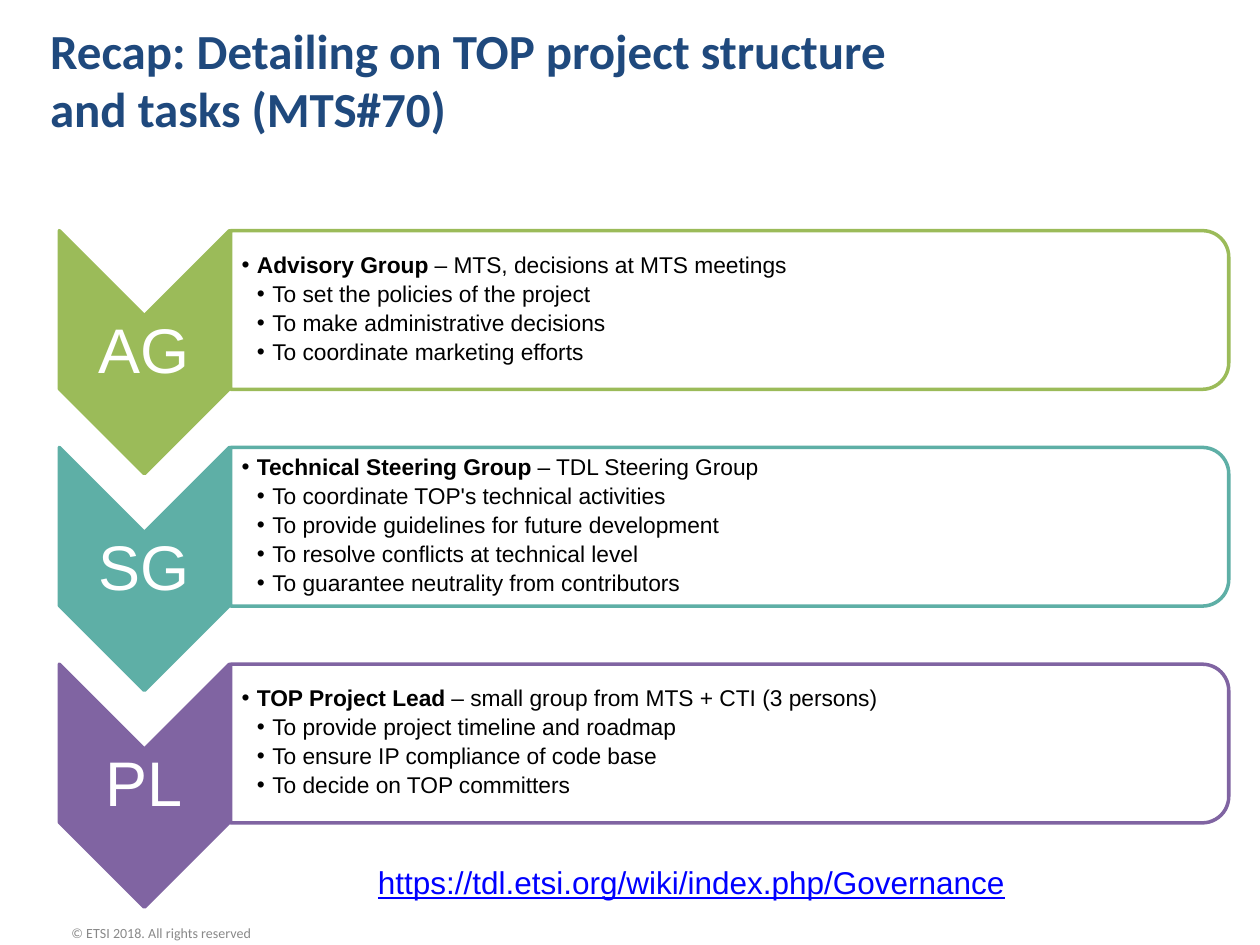
"""Build the slide on project structure and tasks."""
from dataclasses import dataclass

from lxml.etree import SubElement
from pptx import Presentation
from pptx.dml.color import RGBColor
from pptx.enum.shapes import MSO_SHAPE
from pptx.enum.text import MSO_ANCHOR, PP_ALIGN
from pptx.oxml.ns import qn
from pptx.shapes.autoshape import Shape
from pptx.slide import Slide
from pptx.text.text import _Paragraph as Paragraph
from pptx.util import Cm, Pt


@dataclass(frozen=True)
class Theme:
    heading_font: str = "Calibri"
    body_font: str = "Arial"
    heading: str = "1F497D"
    footer: str = "898989"
    body: str = "000000"
    link: str = "0000FF"
    paper: str = "FFFFFF"
    heading_size: float = 28
    label_size: float = 36
    link_size: float = 18
    body_size: float = 13
    footer_size: float = 8


@dataclass(frozen=True)
class Area:
    left: float
    top: float
    width: float
    height: float


@dataclass(frozen=True)
class Group:
    label: str
    color: str
    name: str
    role: str
    tasks: tuple[str, ...]


THEME = Theme()
FIRST_TOP = 4.65
ROW_PITCH = 4.37
INDENT = 0.31
GROUPS = (
    Group("AG", "9BBB59", "Advisory Group ", "– MTS, decisions at MTS meetings", (
        "To set the policies of the project",
        "To make administrative decisions",
        "To coordinate marketing efforts",
    )),
    Group("SG", "5EAFA6", "Technical Steering Group ", "– TDL Steering Group", (
        "To coordinate TOP's technical activities",
        "To provide guidelines for future development",
        "To resolve conflicts at technical level",
        "To guarantee neutrality from contributors",
    )),
    Group("PL", "8064A2", "TOP Project Lead ", "– small group from MTS + CTI (3 persons)", (
        "To provide project timeline and roadmap",
        "To ensure IP compliance of code base",
        "To decide on TOP committers",
    )),
)


def add_span(para: Paragraph, text: str, size: float, color: str,
             font: str = THEME.body_font, bold: bool = False, underline: bool = False) -> None:
    span = para.add_run()
    span.text = text
    span.font.name = font
    span.font.size = Pt(size)
    span.font.bold = bold
    span.font.underline = underline
    span.font.color.rgb = RGBColor.from_string(color)


def add_box(page: Slide, area: Area, anchor: MSO_ANCHOR = MSO_ANCHOR.MIDDLE,
            insets: tuple[float, float, float, float] = (0.25, 0.13, 0.25, 0.13)) -> Shape:
    box = page.shapes.add_textbox(Cm(area.left), Cm(area.top), Cm(area.width), Cm(area.height))
    frame = box.text_frame
    frame.word_wrap = True
    frame.vertical_anchor = anchor
    frame.margin_left, frame.margin_top, frame.margin_right, frame.margin_bottom = map(Cm, insets)
    return box


def add_turned_shape(page: Slide, kind: MSO_SHAPE, center_x: float, center_y: float,
                     width: float, height: float, fill: str, line: str) -> Shape:
    shape = page.shapes.add_shape(kind, Cm(center_x - width / 2), Cm(center_y - height / 2),
                                  Cm(width), Cm(height))
    shape.rotation = 90
    shape.shadow.inherit = False
    shape.fill.solid()
    shape.fill.fore_color.rgb = RGBColor.from_string(fill)
    shape.line.color.rgb = RGBColor.from_string(line)
    shape.line.width = Pt(2)
    return shape


def set_opacity(shape: Shape, percent: int) -> None:
    color = shape.fill._xPr.find(qn("a:solidFill"))[0]
    SubElement(color, qn("a:alpha"), val=str(percent * 1000))


def format_bullet(para: Paragraph, level: int) -> None:
    properties = para._p.get_or_add_pPr()
    properties.set("marL", str(Cm(INDENT * level)))
    properties.set("indent", str(-Cm(INDENT)))
    para.level = level
    para.line_spacing = 0.9
    para.space_after = Pt(2.5)
    SubElement(properties, qn("a:buFont"), typeface=THEME.body_font)
    SubElement(properties, qn("a:buChar"), char="•")


def add_group(page: Slide, group: Group, top: float) -> None:
    add_turned_shape(page, MSO_SHAPE.CHEVRON, 2.91, top + 2.45, 4.9, 3.43,
                     group.color, group.color)
    label = add_box(page, Area(1.19, top + 1.73, 3.43, 1.47), insets=(0.08,) * 4)
    para = label.text_frame.paragraphs[0]
    para.alignment = PP_ALIGN.CENTER
    para.line_spacing = 0.9
    add_span(para, group.label, THEME.label_size, THEME.paper)

    panel = add_turned_shape(page, MSO_SHAPE.ROUND_2_SAME_RECTANGLE, 14.71, top + 1.6, 3.2, 20.12,
                             THEME.paper, group.color)
    set_opacity(panel, 90)
    details = add_box(page, Area(4.62, top + 0.15, 19.96, 2.87), insets=(0.25, 0.02, 0.02, 0.02))
    para = details.text_frame.paragraphs[0]
    format_bullet(para, 1)
    add_span(para, group.name, THEME.body_size, THEME.body, bold=True)
    add_span(para, group.role, THEME.body_size, THEME.body)
    for task in group.tasks:
        para = details.text_frame.add_paragraph()
        format_bullet(para, 2)
        add_span(para, task, THEME.body_size, THEME.body)


def add_title(page: Slide) -> None:
    para = add_box(page, Area(0.76, 0, 22.86, 3.18)).text_frame.paragraphs[0]
    style = (THEME.heading_size, THEME.heading, THEME.heading_font, True)
    add_span(para, "Recap: Detailing on TOP project structure", *style)
    para.add_line_break()
    add_span(para, "and tasks (MTS#70)", *style)


def main() -> None:
    deck = Presentation()
    deck.slide_width, deck.slide_height = Cm(25.4), Cm(19.05)
    page = deck.slides.add_slide(deck.slide_layouts[6])
    add_title(page)
    footer = add_box(page, Area(1.19, 18.29, 14.48, 1.02))
    add_span(footer.text_frame.paragraphs[0], "© ETSI 2018. All rights reserved",
             THEME.footer_size, THEME.footer, THEME.heading_font)
    for row, group in enumerate(GROUPS):
        add_group(page, group, FIRST_TOP + row * ROW_PITCH)
    link = add_box(page, Area(7.37, 17.27, 16.03, 1.02), MSO_ANCHOR.TOP)
    add_span(link.text_frame.paragraphs[0], "https://tdl.etsi.org/wiki/index.php/Governance",
             THEME.link_size, THEME.link, underline=True)
    deck.save("out.pptx")


if __name__ == "__main__":
    main()
